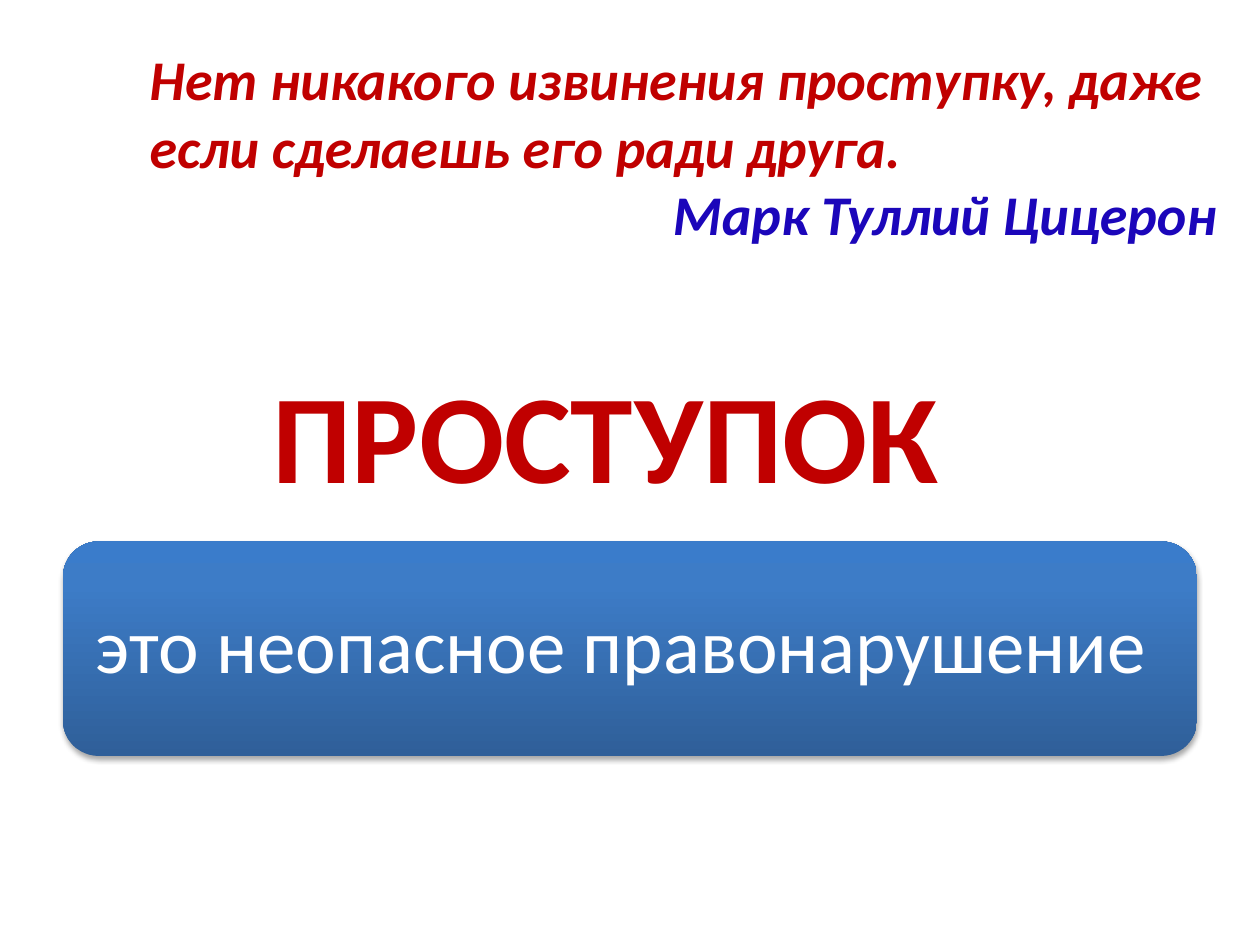
from copy import deepcopy
from dataclasses import dataclass

from lxml.etree import SubElement
from pptx import Presentation
from pptx.dml.color import RGBColor
from pptx.enum.shapes import MSO_SHAPE
from pptx.enum.text import MSO_ANCHOR, PP_ALIGN
from pptx.oxml.ns import qn
from pptx.util import Inches, Pt


@dataclass(frozen=True)
class Theme:
    font: str = "Calibri"
    red: str = "C00000"
    blue: str = "1B06BA"
    white: str = "FFFFFF"
    shadow: str = "000000"
    panel: tuple = ((0, "2F5F99"), (0.8, "3D7CC7"), (1, "3A7CCB"))
    quote_size: int = 32
    title_size: int = 72
    body_size: int = 44


theme = Theme()
prs = Presentation()
prs.slide_width, prs.slide_height = Inches(10), Inches(7.5)
W, H = prs.slide_width, prs.slide_height
s = prs.slides.add_slide(prs.slide_layouts[6])


def add_text(box, paragraphs, size, bold=False, italic=False,
             anchor=MSO_ANCHOR.TOP, inset=None, spacing=None):
    """Add a text box; paragraphs are (text, colour, alignment)."""
    left, top, width, height = box
    tf = s.shapes.add_textbox(int(left * W), int(top * H),
                              int(width * W), int(height * H)).text_frame
    tf.word_wrap = True
    tf.vertical_anchor = anchor
    if inset is not None:
        tf.margin_left = tf.margin_right = Inches(inset)
        tf.margin_top = tf.margin_bottom = Inches(inset)
    for i, (text, color, align) in enumerate(paragraphs):
        p = tf.add_paragraph() if i else tf.paragraphs[0]
        p.alignment = align
        if spacing:
            p.line_spacing = spacing
        r = p.add_run()
        r.text = text
        r.font.name = theme.font
        r.font.size = Pt(size)
        r.font.bold, r.font.italic = bold, italic
        r.font.color.rgb = RGBColor.from_string(color)


# Term being defined
add_text((0.031, 0.375, 0.9, 0.167),
         [("ПРОСТУПОК", theme.red, PP_ALIGN.CENTER)],
         theme.title_size, bold=True, anchor=MSO_ANCHOR.MIDDLE)

# Definition panel with a three-stop gradient
left, top, width, height = 0.05, 0.573, 0.9, 0.227
sp = s.shapes.add_shape(MSO_SHAPE.ROUNDED_RECTANGLE, int(left * W), int(top * H),
                        int(width * W), int(height * H))
sp.line.fill.background()
sp.fill.gradient()
sp.fill.gradient_angle = 90
stops = sp.fill.gradient_stops
gs_list = sp.element.spPr.find(qn("a:gradFill")).find(qn("a:gsLst"))
gs_list.append(deepcopy(gs_list[-1]))
for stop, (position, color) in zip(sp.fill.gradient_stops, theme.panel):
    stop.position = position
    stop.color.rgb = RGBColor.from_string(color)

# Soft shadow below the panel
sp.shadow.inherit = False
effects = sp.element.spPr.find(qn("a:effectLst"))
shadow = SubElement(effects, qn("a:outerShdw"), blurRad=str(Pt(3.1)),
                    dist=str(Pt(1.8)), dir="5400000", rotWithShape="0")
color = SubElement(shadow, qn("a:srgbClr"), val=theme.shadow)
SubElement(color, qn("a:alpha"), val="35000")

# Definition, set in from the panel's edge
pad = 0.08
add_text((left + pad / 10, top + pad / 7.5, width - pad / 5, height - pad / 3.75),
         [("это неопасное правонарушение", theme.white, PP_ALIGN.LEFT)],
         theme.body_size, anchor=MSO_ANCHOR.MIDDLE, inset=0.18, spacing=0.9)

# Quotation and its author
add_text((0.109, 0.041, 0.867, 0.229),
         [("Нет никакого извинения проступку, даже если сделаешь его ради друга.",
           theme.red, PP_ALIGN.LEFT),
          ("Марк Туллий Цицерон", theme.blue, PP_ALIGN.RIGHT)],
         theme.quote_size, bold=True, italic=True)

prs.save("out.pptx")
